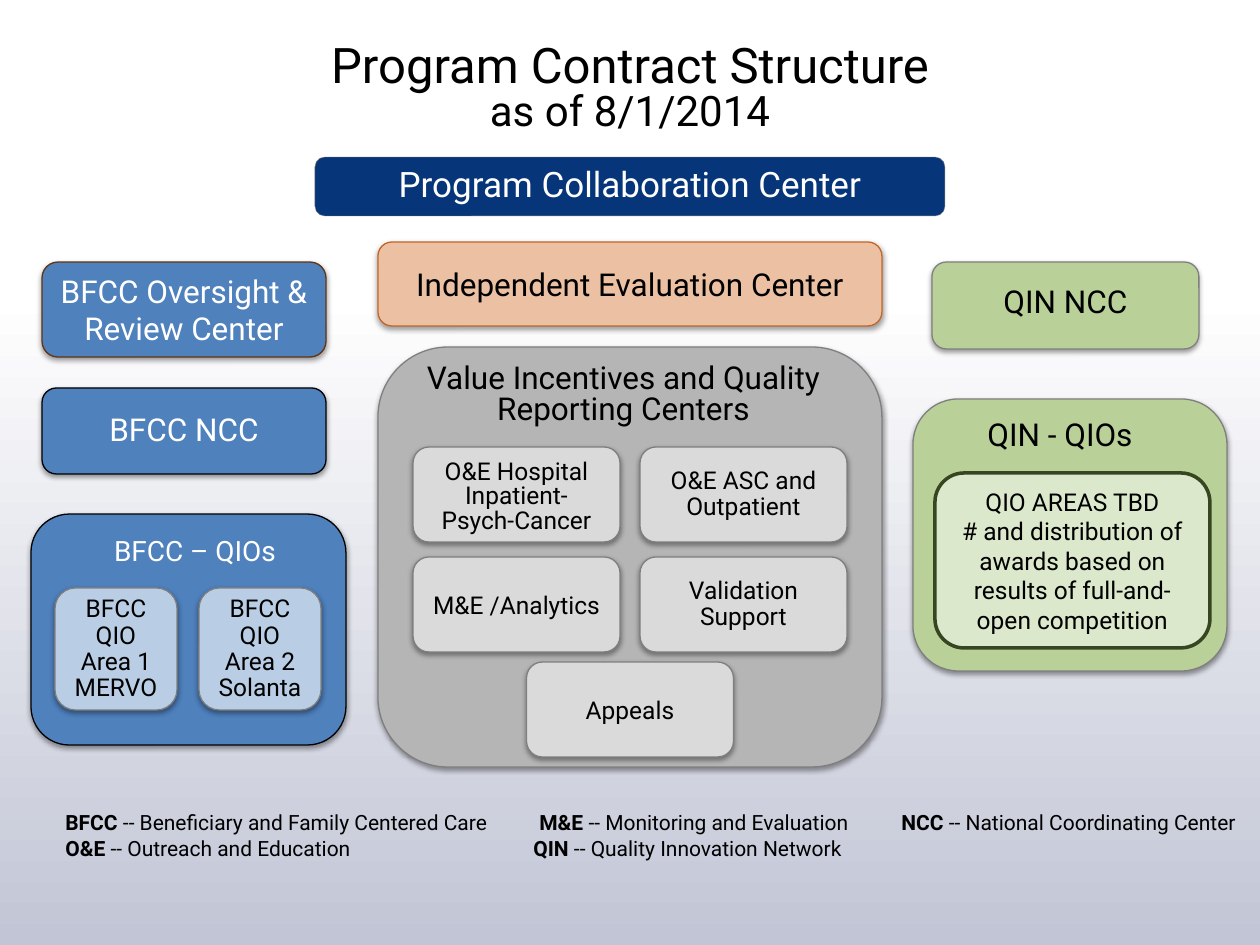
from lxml import etree
from pptx import Presentation
from pptx.dml.color import RGBColor
from pptx.enum.shapes import MSO_SHAPE
from pptx.enum.text import MSO_ANCHOR, MSO_AUTO_SIZE, PP_ALIGN
from pptx.oxml.ns import qn
from pptx.util import Emu, Pt

PX = 914400 / 126
FONT = "Roboto"
COLORS = {
    "black": "000000", "white": "FFFFFF", "haze": "C2C5D5", "navy": "06357A",
    "blue": "4F81BD", "pale_blue": "B9CDE5", "green": "B9D198",
    "pale_green": "DCE8CB", "dark_green": "364620", "peach": "ECC1A3",
    "rust": "C26627", "brown": "613314", "gray": "B5B5B5",
    "pale_gray": "DADADA", "edge": "7F7F7F",
}

# Content: boxes are (left, top, width, height) in px
TITLE = ["Program Contract Structure", "as of 8/1/2014"]
PANELS = [
    ((913, 399, 314, 272), "green", "edge"),
    ((378, 347, 504, 420), "gray", "edge"),
    ((31, 514, 315, 231), "blue", "black"),
]
HEADINGS = [
    ((33, 528, 324, 80), "BFCC – QIOs", dict(size=16, color="white")),
    ((892, 409, 336, 50), "QIN - QIOs", dict(size=18)),
    ((396, 358, 455, 77), "Value Incentives and Quality Reporting Centers",
     dict(size=18, spacing=18)),
]
CENTERS = [
    ((378, 242, 504, 84), "Independent Evaluation Center", "peach", "rust",
     dict(size=18)),
    ((932, 262, 267, 87), "QIN NCC", "green", "edge", dict(size=18, spacing=16)),
    ((42, 388, 284, 86), "BFCC NCC", "blue", "black",
     dict(size=18, spacing=16, color="white", margins=(6, 0))),
    ((42, 262, 284, 95), "BFCC Oversight & Review Center", "blue", "brown",
     dict(size=18, color="white")),
]
COLLABORATION = ((315, 157, 630, 59), "Program Collaboration Center")
QIO_AWARDS = ((935, 473, 275, 175), [
    "QIO AREAS TBD",
    "# and distribution of awards based on results of full-and-open competition",
])
BFCC_AREAS = [["BFCC", "QIO Area 1", "MERVO"], ["BFCC", "QIO Area 2", "Solanta"]]
REPORTING_ROWS = [
    (447, [("O&E Hospital Inpatient-Psych-Cancer", dict(spacing=14, margins=(6, 0))),
           ("O&E ASC and Outpatient", dict(spacing=15))]),
    (557, [("M&E /Analytics", {}), ("Validation Support", dict(spacing=15))]),
    (662, [("Appeals", {})]),
]
LEGEND = [  # tab stops in px, then (abbreviation, meaning) entries
    ((474, 836), [("BFCC", "Beneficiary and Family Centered Care"),
                  ("M&E", "Monitoring and Evaluation"),
                  ("NCC", "National Coordinating Center")]),
    ((468,), [("O&E", "Outreach and Education"),
              ("QIN", "Quality Innovation Network")]),
]


def px(value):
    return Emu(round(value * PX))


def rgb(name):
    return RGBColor.from_string(COLORS[name])


def write(frame, lines, size=14, color="black", spacing=None,
          align=PP_ALIGN.CENTER, margins=(6, 6), tabs=()):
    """Fill a frame; each line is a string or a list of (text, bold) runs."""
    frame.word_wrap = True
    frame.margin_top, frame.margin_bottom = map(px, margins)
    lines = [lines] if isinstance(lines, str) else lines
    for i, line in enumerate(lines):
        paragraph = frame.paragraphs[0] if i == 0 else frame.add_paragraph()
        paragraph.alignment = align
        if spacing:
            paragraph.line_spacing = Pt(spacing)
        if tabs:
            stops = etree.SubElement(paragraph._p.get_or_add_pPr(), qn("a:tabLst"))
            for stop in tabs[i]:
                etree.SubElement(stops, qn("a:tab"), pos=str(px(stop)), algn="l")
        for text, bold in [(line, False)] if isinstance(line, str) else line:
            run = paragraph.add_run()
            run.text = text
            run.font.name, run.font.size, run.font.bold = FONT, Pt(size), bold
            run.font.color.rgb = rgb(color)


def add_shadow(shape):
    effects = shape._element.spPr.find(qn("a:effectLst"))
    outer = etree.SubElement(effects, qn("a:outerShdw"), blurRad=str(Pt(3.1)),
                             dist=str(Pt(1.6)), dir="5400000", rotWithShape="0")
    shade = etree.SubElement(outer, qn("a:srgbClr"), val=COLORS["black"])
    etree.SubElement(shade, qn("a:alpha"), val="38000")


def add_box(box, fill, edge="edge", lines=None, weight=0.75, shadow=True, **style):
    shape = slide.shapes.add_shape(MSO_SHAPE.ROUNDED_RECTANGLE, *map(px, box))
    shape.fill.solid()
    shape.fill.fore_color.rgb = rgb(fill)
    shape.line.color.rgb = rgb(edge)
    shape.line.width = Pt(weight)
    shape.shadow.inherit = False
    if shadow:
        add_shadow(shape)
    if lines:
        shape.text_frame.vertical_anchor = MSO_ANCHOR.MIDDLE
        write(shape.text_frame, lines, **style)


def add_text(box, lines, **style):
    write(slide.shapes.add_textbox(*map(px, box)).text_frame, lines, **style)


prs = Presentation()
prs.slide_width, prs.slide_height = px(1260), px(945)
slide = prs.slides.add_slide(prs.slide_layouts[5])

# Background fading from white to haze
backdrop = slide.background.fill
backdrop.gradient()
backdrop.gradient_angle = 270
for stop, (position, name) in zip(backdrop.gradient_stops,
                                  [(0.31, "white"), (1, "haze")]):
    stop.position = position
    stop.color.rgb = rgb(name)

# Title
title = slide.shapes.title
title.left, title.top, title.width, title.height = map(px, (0, 43, 1260, 83))
title.text_frame.auto_size = MSO_AUTO_SIZE.NONE
title.text_frame.vertical_anchor = MSO_ANCHOR.MIDDLE
write(title.text_frame, TITLE, size=28)
subtitle = title.text_frame.paragraphs[1]
subtitle.line_spacing = Pt(24)
subtitle.runs[0].font.size = Pt(24)

# Panels with their headings
for box, fill, edge in PANELS:
    add_box(box, fill, edge)
for box, heading, style in HEADINGS:
    add_text(box, heading, **style)

# Centers
box, collaboration = COLLABORATION
add_box(box, "navy", lines=collaboration, weight=0.25, shadow=False,
        size=20, color="white", margins=(0, 6))
for box, center, fill, edge, style in CENTERS:
    add_box(box, fill, edge, center, **style)

# QIO boxes inside the side panels
box, awards = QIO_AWARDS
add_box(box, "pale_green", "dark_green", awards, weight=2, shadow=False)
for i, area in enumerate(BFCC_AREAS):
    add_box((55 + 144 * i, 588, 122, 122), "pale_blue", lines=area, spacing=15)

# Reporting centers, each row centred in the middle panel
CELL_W, CELL_H, GAP = 207, 95, 20
for top, row in REPORTING_ROWS:
    left = 630 - (len(row) * (CELL_W + GAP) - GAP) / 2
    for i, (center, style) in enumerate(row):
        add_box((left + i * (CELL_W + GAP), top, CELL_W, CELL_H), "pale_gray",
                lines=center, **style)

# Legend of abbreviations
legend_lines = []
for _, entries in LEGEND:
    runs = []
    for i, (abbreviation, meaning) in enumerate(entries):
        runs += [("\t" * (i > 0) + abbreviation, True), (f" -- {meaning}", False)]
    legend_lines.append(runs)
add_text((53, 804, 1207, 89), legend_lines, size=12, align=PP_ALIGN.LEFT,
         tabs=[stops for stops, _ in LEGEND])

prs.save("out.pptx")
